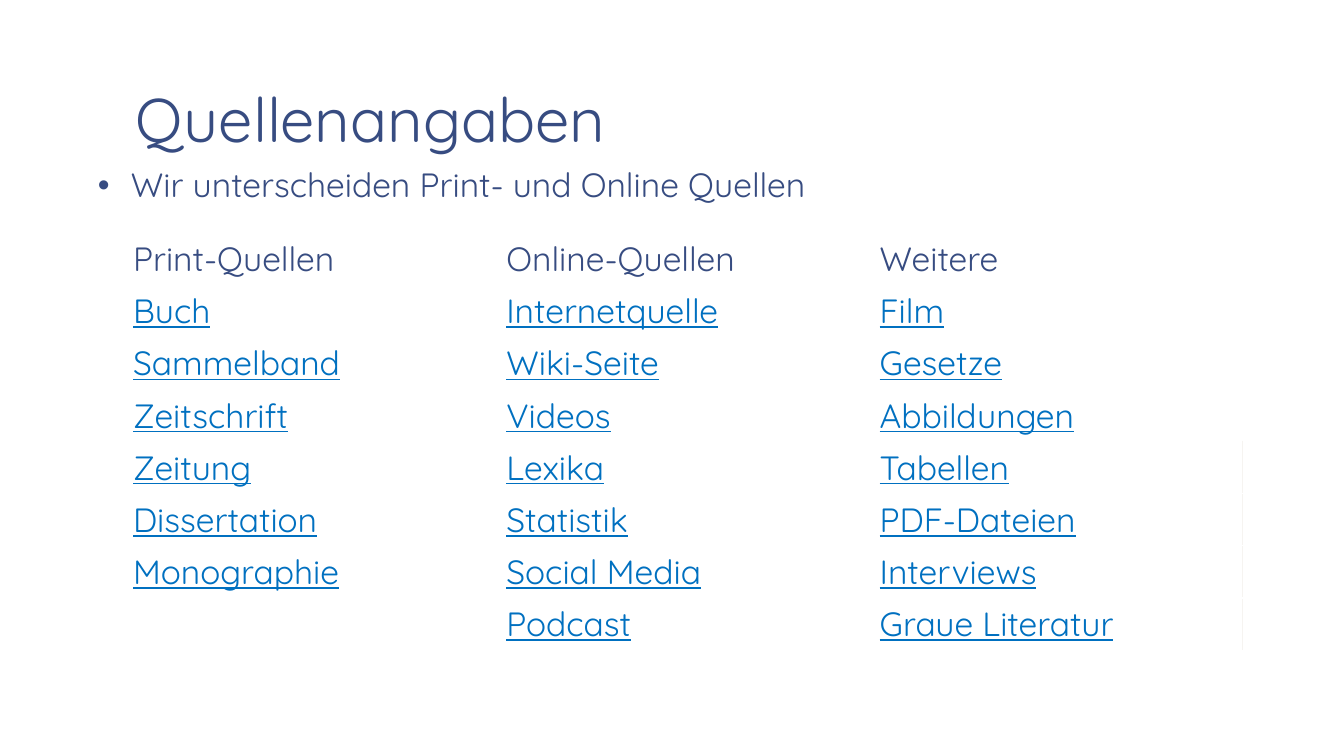
from lxml import etree
from pptx import Presentation
from pptx import util as u
from pptx.dml.color import RGBColor
from pptx.enum import text
from pptx.oxml import parse_xml
from pptx.oxml.ns import nsdecls, qn

COLORS = {"navy": "374C81", "link": "0070C0", "rule": "F6F4F1"}
FONT = "Quicksand"
SOURCES = {
    "Print-Quellen": ["Buch", "Sammelband", "Zeitschrift", "Zeitung",
                      "Dissertation", "Monographie"],
    "Online-Quellen": ["Internetquelle", "Wiki-Seite", "Videos", "Lexika",
                       "Statistik", "Social Media", "Podcast"],
    "Weitere": ["Film", "Gesetze", "Abbildungen", "Tabellen", "PDF-Dateien",
                "Interviews", "Graue Literatur"],
}
ROW_HEIGHT = 52
FIRST_RULED_ROW = 4


def px(length):
    """Turn px into EMU, with 1344 px across the slide."""
    return u.Emu(round(length * 12192000 / 1344))


def write(frame, content, size=24, color="navy", underline=None, spacing=None,
          anchor=None, bullet_indent=None):
    """Write one formatted paragraph into a text frame."""
    frame.word_wrap = True
    if anchor is not None:
        frame.vertical_anchor = anchor
    paragraph = frame.paragraphs[0]
    paragraph.text = content
    if spacing:
        paragraph.line_spacing = spacing
    if bullet_indent:
        properties = paragraph._p.get_or_add_pPr()
        properties.set("marL", str(px(bullet_indent)))
        properties.set("indent", str(-px(bullet_indent)))
        etree.SubElement(properties, qn("a:buFont")).set("typeface", "Arial")
        etree.SubElement(properties, qn("a:buChar")).set("char", "•")
    paragraph.alignment = text.PP_ALIGN.LEFT
    font = paragraph.runs[0].font
    font.name, font.size, font.bold = FONT, u.Pt(size), False
    font.underline = underline
    font.color.rgb = RGBColor.from_string(COLORS[color])


def set_margins(frame):
    """Give a text frame the slide's inner margins."""
    frame.margin_left = frame.margin_right = px(13)
    frame.margin_top = frame.margin_bottom = px(7)
    frame.auto_size = text.MSO_AUTO_SIZE.NONE


def add_title(slide, left, top, width, height):
    """Place and format the title placeholder."""
    title = slide.shapes.title
    title.left, title.top, title.width, title.height = map(
        px, (left, top, width, height))
    set_margins(title.text_frame)
    write(title.text_frame, "Quellenangaben", size=44, spacing=0.85,
          anchor=text.MSO_ANCHOR.BOTTOM)


def add_intro(slide, left, top, width, height):
    """Add the bulleted introduction."""
    intro = slide.shapes.add_textbox(*map(px, (left, top, width, height)))
    set_margins(intro.text_frame)
    write(intro.text_frame, "Wir unterscheiden Print- und Online Quellen",
          spacing=0.95, bullet_indent=33)


def add_right_rule(cell):
    """Draw a thin border at the right of a cell."""
    rule = parse_xml(
        f'<a:lnR {nsdecls("a")} w="{u.Pt(0.75)}"><a:solidFill>'
        f'<a:srgbClr val="{COLORS["rule"]}"/></a:solidFill></a:lnR>')
    cell._tc.get_or_add_tcPr().insert(0, rule)


def add_sources(slide, left, top, width):
    """Add the table with one column for each kind of source."""
    row_count = 1 + max(map(len, SOURCES.values()))
    table = slide.shapes.add_table(
        row_count, len(SOURCES),
        *map(px, (left, top, width, row_count * ROW_HEIGHT))).table
    table.first_row = table.horz_banding = False
    for cell in table.iter_cells():
        cell.fill.background()
        cell.vertical_anchor = text.MSO_ANCHOR.MIDDLE
    for column, (heading, entries) in enumerate(SOURCES.items()):
        write(table.cell(0, column).text_frame, heading)
        for row, entry in enumerate(entries, 1):
            write(table.cell(row, column).text_frame, entry,
                  color="link", underline=True)
    for row in range(FIRST_RULED_ROW, row_count):
        add_right_rule(table.cell(row, len(SOURCES) - 1))


def main():
    """Build and save the slide."""
    presentation = Presentation()
    presentation.slide_width, presentation.slide_height = px(1344), px(756)
    slide = presentation.slides.add_slide(presentation.slide_layouts[5])
    add_title(slide, 123, 8, 1120, 154)
    add_intro(slide, 85, 160, 1190, 60)
    add_sources(slide, 123, 233, 1120)
    presentation.save("out.pptx")


if __name__ == "__main__":
    main()
